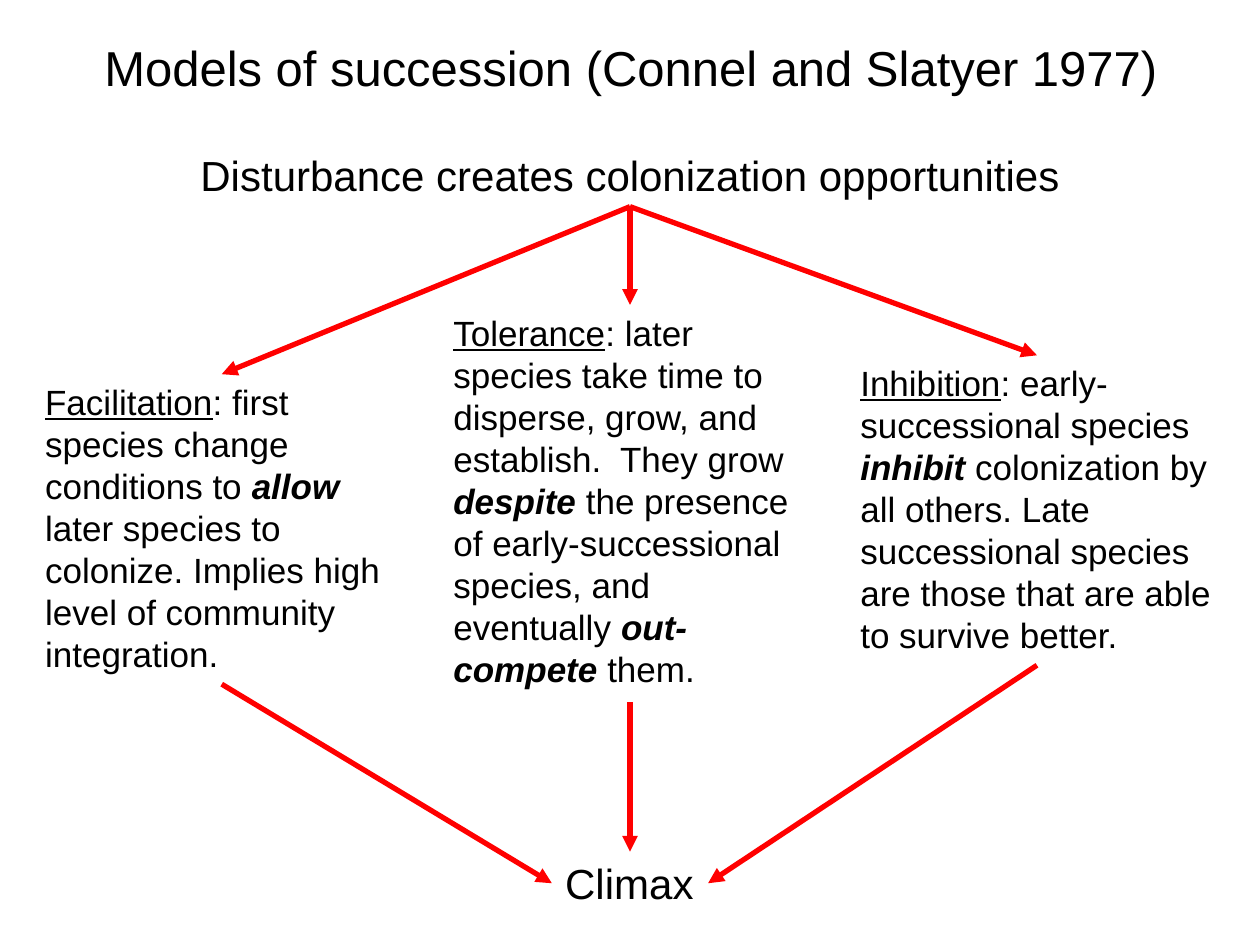
import pptx
import pptx.dml.color
import pptx.enum.shapes
import pptx.enum.text
import pptx.util
from lxml import etree
from pptx.oxml.ns import qn

Inches = pptx.util.Inches

COLORS = {"text": "000000", "arrow": "FF0000", "panel": "FFFFFF"}
FONT = "Arial"
MODEL_SIZE = 20
MODEL_WIDTH = 3

STYLES = {
    "plain": {},
    "name": {"underline": True},
    "stress": {"bold": True, "italic": True},
}

# text, size, (left, top, width, height)
HEADINGS = [
    ("Models of succession (Connel and Slatyer 1977)", 28, (0.67, 0.25, 8.67, 0.57)),
    ("Disturbance creates colonization opportunities", 24, (1.45, 1.14, 7.1, 0.5)),
    ("Climax", 24, (4.38, 6.76, 1.23, 0.5)),
]

# "end" is where the model's arrow meets the climax
MODELS = [
    {
        "left": 0.26, "top": 2.97, "height": 2.46, "end": (4.38, 7.01),
        "runs": [
            ("Facilitation", "name"),
            (": first species change conditions to ", "plain"),
            ("allow", "stress"),
            (" later species to colonize. Implies high level of community integration.", "plain"),
        ],
    },
    {
        "left": 6.73, "top": 2.82, "height": 2.46, "end": (5.62, 7.01),
        "runs": [
            ("Inhibition", "name"),
            (": early-successional species ", "plain"),
            ("inhibit", "stress"),
            (" colonization by all others. Late successional species are those "
             "that are able to survive better.", "plain"),
        ],
    },
    {
        "left": 3.5, "top": 2.42, "height": 3.15, "end": (5, 6.76), "panel": True,
        "runs": [
            ("Tolerance", "name"),
            (": later species take time to disperse, grow, and establish.  They grow ", "plain"),
            ("despite", "stress"),
            (" the presence of early-successional species, and eventually ", "plain"),
            ("out-compete", "stress"),
            (" them.", "plain"),
        ],
    },
]
DISTURBANCE_POINT = (5, 1.64)


def rgb(name):
    return pptx.dml.color.RGBColor.from_string(COLORS[name])


def write_text(shape, runs, size, wrap, alignment):
    frame = shape.text_frame
    frame.word_wrap = wrap
    frame.vertical_anchor = pptx.enum.text.MSO_ANCHOR.TOP
    frame.auto_size = pptx.enum.text.MSO_AUTO_SIZE.SHAPE_TO_FIT_TEXT
    paragraph = frame.paragraphs[0]
    paragraph.alignment = alignment
    for text, style in runs:
        run = paragraph.add_run()
        run.text = text
        run.font.color.rgb = rgb("text")
        font_values = {"name": FONT, "size": pptx.util.Pt(size), **STYLES[style]}
        for key, value in font_values.items():
            setattr(run.font, key, value)


def add_arrow(slide, start, end):
    connector = slide.shapes.add_connector(
        pptx.enum.shapes.MSO_CONNECTOR.STRAIGHT, *map(Inches, start + end))
    connector.line.color.rgb = rgb("arrow")
    connector.line.width = pptx.util.Pt(3)
    etree.SubElement(connector.line._get_or_add_ln(), qn("a:tailEnd"), type="triangle")
    etree.SubElement(connector._element.spPr, qn("a:effectLst"))


def add_model(slide, model):
    box = [Inches(model[key]) for key in ("left", "top")]
    box += [Inches(MODEL_WIDTH), Inches(model["height"])]
    if model.get("panel"):
        shape = slide.shapes.add_shape(pptx.enum.shapes.MSO_SHAPE.RECTANGLE, *box)
        shape.shadow.inherit = False
        shape.fill.solid()
        shape.fill.fore_color.rgb = rgb("panel")
        shape.line.fill.background()
    else:
        shape = slide.shapes.add_textbox(*box)
    write_text(shape, model["runs"], MODEL_SIZE, True, pptx.enum.text.PP_ALIGN.LEFT)


def main():
    presentation = pptx.Presentation()
    presentation.slide_width = Inches(10)
    presentation.slide_height = Inches(7.5)
    slide = presentation.slides.add_slide(presentation.slide_layouts[6])

    for text, size, box in HEADINGS:
        shape = slide.shapes.add_textbox(*map(Inches, box))
        write_text(shape, [(text, "plain")], size, False, pptx.enum.text.PP_ALIGN.CENTER)

    for model in MODELS:
        center = model["left"] + MODEL_WIDTH / 2
        add_arrow(slide, DISTURBANCE_POINT, (center, model["top"]))
        add_arrow(slide, (center, model["top"] + model["height"]), model["end"])
        add_model(slide, model)

    presentation.save("out.pptx")


if __name__ == "__main__":
    main()
